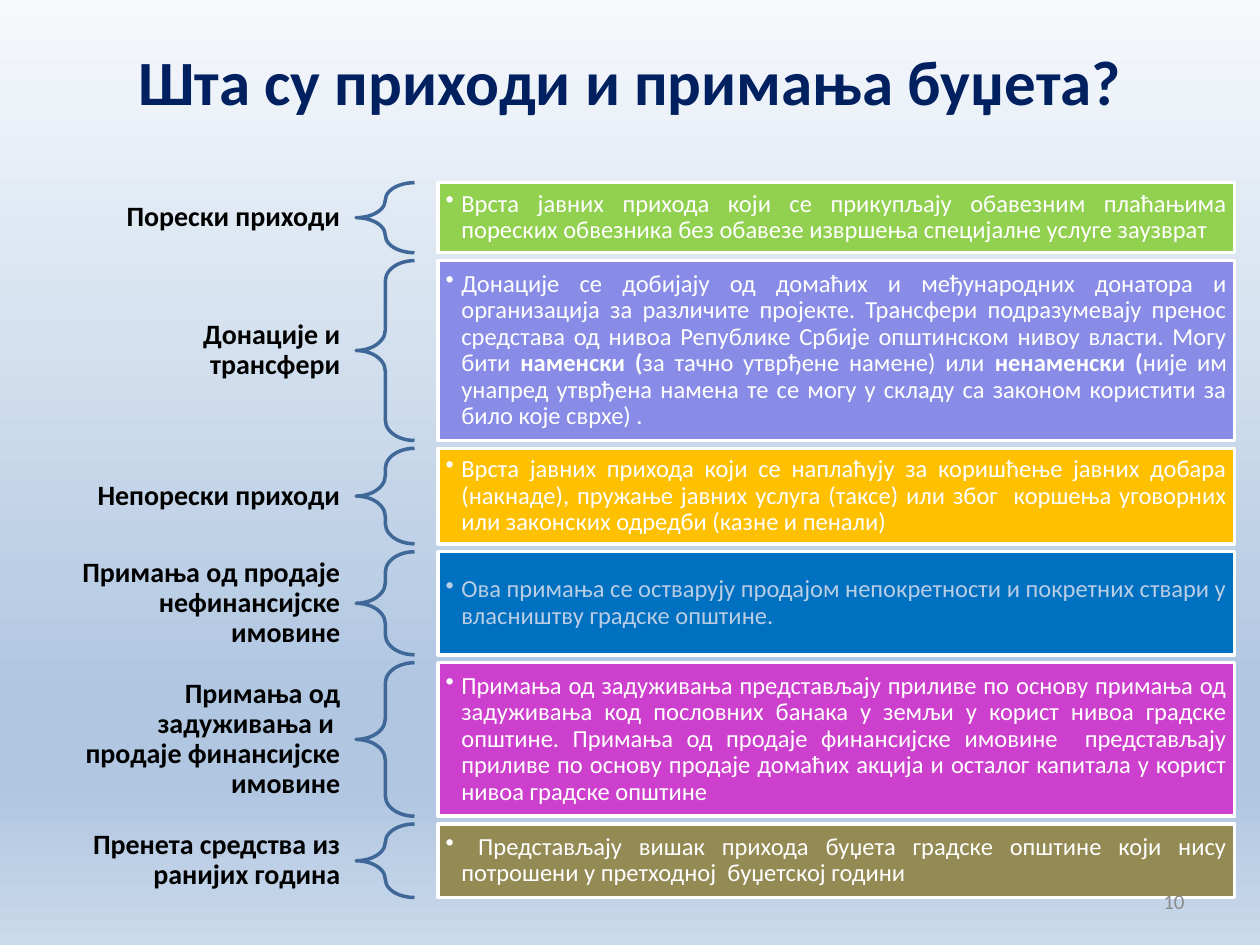
from copy import deepcopy

from pptx import Presentation
from pptx.dml.color import RGBColor
from pptx.enum import shapes, text
from pptx.oxml import ns, xmlchemy
from pptx.util import Pt

NAVY = RGBColor(0x00, 0x20, 0x60)
BLACK = RGBColor(0x00, 0x00, 0x00)
WHITE = RGBColor(0xFF, 0xFF, 0xFF)
GREY = RGBColor(0x8C, 0x8C, 0x8C)
PALE_BLUE = RGBColor(0xB9, 0xCD, 0xE5)
BRACE_BLUE = RGBColor(0x3F, 0x67, 0x97)
GREEN = RGBColor(0x92, 0xD0, 0x50)
LILAC = RGBColor(0x88, 0x8C, 0xE6)
AMBER = RGBColor(0xFF, 0xC0, 0x00)
BLUE = RGBColor(0x00, 0x70, 0xC0)
MAGENTA = RGBColor(0xCD, 0x3F, 0xCD)
OLIVE = RGBColor(0x94, 0x8A, 0x54)
BACKGROUND = [
    (0, RGBColor(0xF6, 0xF9, 0xFC)),
    (0.74, RGBColor(0xB0, 0xC6, 0xE1)),
    (0.83, RGBColor(0xB0, 0xC6, 0xE1)),
    (1, RGBColor(0xCA, 0xD9, 0xEB)),
]

# Columns and rows, in points
LABEL_X, LABEL_W = 36, 167.3
BRACE_X, BRACE_W = 203.5, 33.4
BOX_X, BOX_W = 250.4, 455
ROWS_TOP, ROW_GAP = 104.4, 4.5

# Label, label height, row height, box fill, text colour, (text, bold) runs
ROWS = [
    ("Порески приходи", 25.2, 40, GREEN, WHITE, [
        ("Врста јавних прихода који се прикупљају обавезним плаћањима пореских "
         "обвезника без обавезе извршења специјалне услуге заузврат", False)]),
    ("Донације и трансфери", 41.8, 102.8, LILAC, WHITE, [
        ("Донације се добијају од домаћих и међународних донатора и организација "
         "за различите пројекте. Трансфери подразумевају пренос средстава од нивоа "
         "Републике Србије општинском нивоу власти. Могу бити ", False),
        ("наменски (", True),
        ("за тачно утврђене намене) или ", False),
        ("ненаменски (", True),
        ("није им унапред утврђена намена те се могу у складу са законом "
         "користити за било које сврхе) .", False)]),
    ("Непорески приходи", 25.2, 54.6, AMBER, WHITE, [
        ("Врста јавних прихода који се наплаћују за коришћење јавних добара "
         "(накнаде), пружање јавних услуга (таксе) или због  коршења уговорних "
         "или законских одредби (казне и пенали)", False)]),
    ("Примања од продаје нефинансијске имовине", 58.9, 58.9, BLUE, PALE_BLUE, [
        ("Ова примања се остварују продајом непокретности и покретних ствари у "
         "власништву градске општине.", False)]),
    ("Примања од задуживања и  продаје финансијске имовине", 77.8, 87.7,
     MAGENTA, WHITE, [
        ("Примања од задуживања представљају приливе по основу примања од "
         "задуживања код пословних банака у земљи у корист нивоа градске општине. "
         "Примања од продаје финансијске имовине  представљају приливе по основу "
         "продаје домаћих акција и осталог капитала у корист нивоа градске општине",
         False)]),
    ("Пренета средства из ранијих година", 42, 42, OLIVE, WHITE, [
        (" Представљају вишак прихода буџета градске општине који нису потрошени "
         "у претходној  буџетској години", False)]),
]


def paint_background(s):
    fill = s.background.fill
    fill.gradient()
    fill.gradient_angle = 270
    # Extend the default two stops to the number needed
    stop_list = s.element.find(".//" + ns.qn("a:gsLst"))
    while len(stop_list) < len(BACKGROUND):
        stop_list.append(deepcopy(stop_list[0]))
    for stop, (position, color) in zip(fill.gradient_stops, BACKGROUND):
        stop.position = position
        stop.color.rgb = color


def write(sp, runs, size, color, align, margins=(7.2, 3.6), spacing=1.0):
    tf = sp.text_frame
    side, edge = (Pt(m) for m in margins)
    frame = {"word_wrap": True, "vertical_anchor": text.MSO_ANCHOR.MIDDLE,
             "margin_left": side, "margin_right": side,
             "margin_top": edge, "margin_bottom": edge}
    for name, value in frame.items():
        setattr(tf, name, value)
    p = tf.paragraphs[0]
    p.alignment = align
    p.line_spacing = spacing
    for content, bold in runs:
        r = p.add_run()
        r.text = content
        for name, value in {"name": "Calibri", "size": Pt(size), "bold": bold}.items():
            setattr(r.font, name, value)
        r.font.color.rgb = color
    return p


def add_text(s, box, *args, **kwargs):
    sp = s.shapes.add_textbox(*map(Pt, box))
    write(sp, *args, **kwargs)


def add_outlined(s, kind, box, line):
    sp = s.shapes.add_shape(kind, *map(Pt, box))
    sp.shadow.inherit = False
    sp.line.color.rgb = line
    sp.line.width = Pt(2)
    return sp


def add_brace(s, top, height):
    box = (BRACE_X, top, BRACE_W, height)
    sp = add_outlined(s, shapes.MSO_SHAPE.LEFT_BRACE, box, BRACE_BLUE)
    sp.fill.background()
    sp.adjustments[0] = 0.35
    sp.adjustments[1] = 0.5


def add_bullet(p, indent):
    props = p._p.get_or_add_pPr()
    props.set("marL", str(Pt(indent)))
    props.set("indent", str(-Pt(indent)))
    bullet = xmlchemy.OxmlElement("a:buChar")
    bullet.set("char", "•")
    props.append(bullet)


def add_description(s, top, height, fill, color, runs):
    box = (BOX_X, top, BOX_W, height)
    sp = add_outlined(s, shapes.MSO_SHAPE.RECTANGLE, box, WHITE)
    sp.fill.solid()
    sp.fill.fore_color.rgb = fill
    p = write(sp, runs, 14, color, text.PP_ALIGN.JUSTIFY, (4.2, 4.2), 0.9)
    add_bullet(p, 9)


def main():
    prs = Presentation()
    prs.slide_width, prs.slide_height = Pt(720), Pt(540)
    s = prs.slides.add_slide(prs.slide_layouts[6])
    paint_background(s)

    # Title
    add_text(s, (36, 21.6, 648, 49), [("Шта су приходи и примања буџета?", True)],
             36, NAVY, text.PP_ALIGN.CENTER)

    # Revenue kinds: label, brace, description
    top = ROWS_TOP
    for label, label_height, height, fill, color, runs in ROWS:
        label_top = top + (height - label_height) / 2
        add_text(s, (LABEL_X, label_top, LABEL_W, label_height), [(label, True)],
                 16, BLACK, text.PP_ALIGN.RIGHT, (8.9, 3), 0.9)
        add_brace(s, top, height)
        add_description(s, top, height, fill, color, runs)
        top += height + ROW_GAP

    # Slide number
    add_text(s, (516, 500.5, 168, 28.75), [("10", False)],
             12, GREY, text.PP_ALIGN.RIGHT)

    prs.save("out.pptx")


if __name__ == "__main__":
    main()
